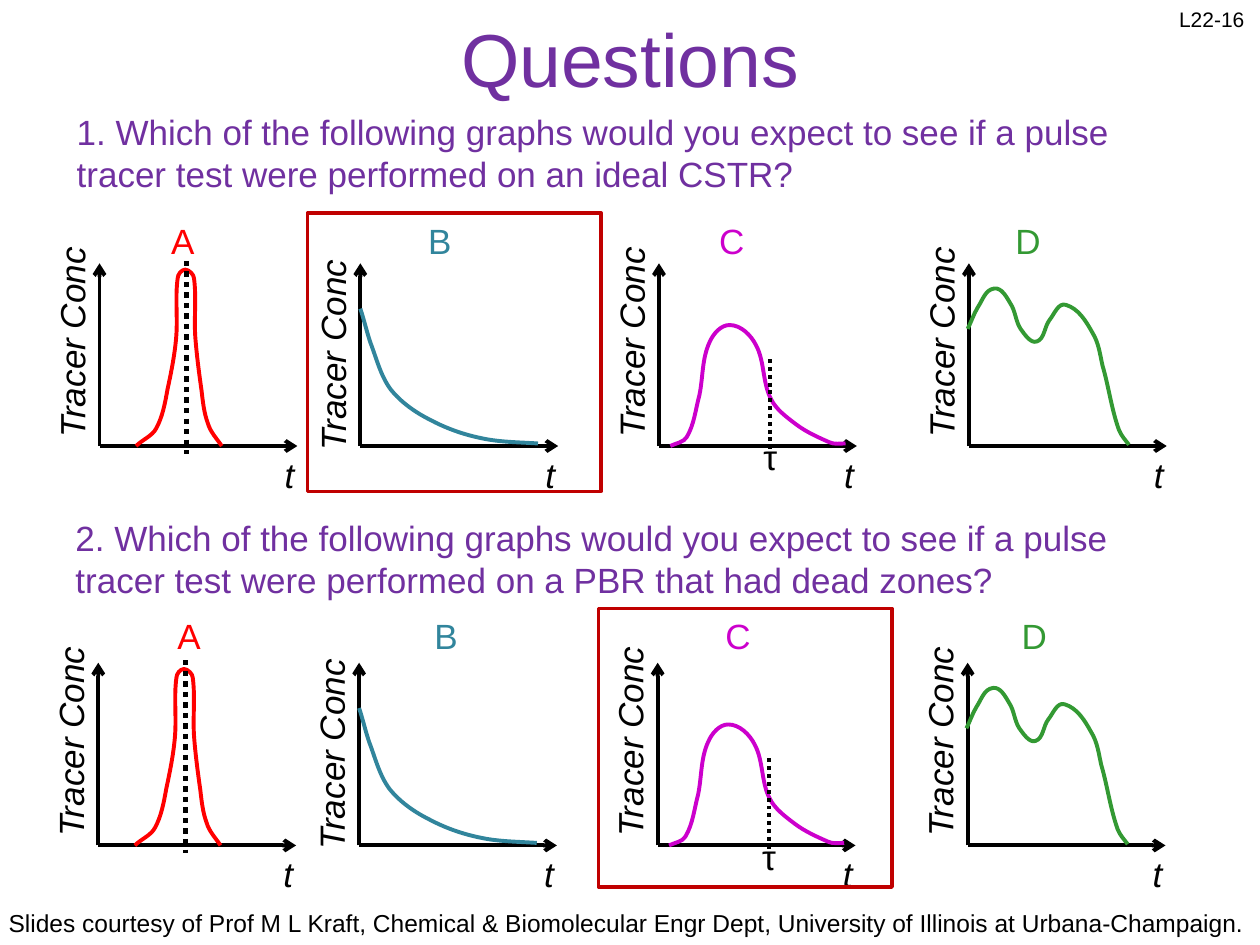
import dataclasses

import lxml.etree
import pptx
import pptx.dml.color
import pptx.enum.dml
import pptx.enum.shapes
import pptx.enum.text
import pptx.oxml.ns
import pptx.util

RGBColor = pptx.dml.color.RGBColor
qn = pptx.oxml.ns.qn

BLACK = RGBColor.from_string("000000")
PURPLE = RGBColor.from_string("7030A0")
RED = RGBColor.from_string("FF0000")
TEAL = RGBColor.from_string("31859C")
MAGENTA = RGBColor.from_string("CC00CC")
GREEN = RGBColor.from_string("339933")
FRAME_RED = RGBColor.from_string("C00000")

# The slide is a grid of 1000 columns by 750 rows, each 0.01 inch
COLUMNS, ROWS = 1000, 750
CELL = pptx.util.Inches(0.01)
AXIS_WIDTH, AXIS_HEIGHT = 157, 145
BASE = 354      # row of the time axes under the first question
LABEL = 44      # height of a one-line label


@dataclasses.dataclass
class Graph:
    letter: str
    color: RGBColor
    letter_left: int
    left: int           # column of the vertical axis
    knots: list         # curve: column right of, rows above the origin
    label_rise: int = 105
    marker: tuple = ()  # dotted line: column, top, bottom, width in points
    tau: bool = False


GRAPHS = [
    Graph("A", RED, 126, 79,
          [(29, 0), (45, 14), (54, 45), (61, 88), (62, 133), (68, 140),
           (75, 133), (76, 87), (81, 44), (86, 18), (97, 0)],
          marker=(69, 147, -6, 3)),
    Graph("B", TEAL, 330, 286,
          [(0, 109), (8, 82), (24, 45), (55, 21), (97, 6), (141, 2)],
          label_rise=95),
    Graph("C", MAGENTA, 561, 523,
          [(9, 0), (22, 7), (32, 40), (40, 82), (56, 96), (77, 80),
           (89, 37), (109, 17), (135, 3), (148, 2)],
          marker=(88, 69, -4, 2.25), tau=True),
    Graph("D", GREEN, 796, 769,
          [(-1, 93), (7, 110), (20, 125), (33, 113), (41, 93), (54, 83),
           (64, 100), (77, 112), (98, 90), (106, 64), (119, 13), (127, 1)]),
]


def cells(*counts):
    return [round(count * CELL) for count in counts]


def add_text(page, text, area, size=20, color=BLACK, italic=False, wrap=False):
    box = page.shapes.add_textbox(*cells(*area))
    box.text_frame.text = text
    box.text_frame.word_wrap = wrap
    span = box.text_frame.paragraphs[0].runs[0]
    span.font.name = "Arial"
    span.font.size = pptx.util.Pt(size)
    span.font.color.rgb = color
    span.font.italic = italic
    return box


def style_line(line, color, width):
    line.color.rgb = color
    line.width = pptx.util.Pt(width)


def add_line(page, start, end, width=2.25, arrow=False, dotted=False):
    connector = page.shapes.add_connector(
        pptx.enum.shapes.MSO_CONNECTOR.STRAIGHT, *cells(*start, *end))
    style_line(connector.line, BLACK, width)
    if dotted:
        connector.line.dash_style = pptx.enum.dml.MSO_LINE.ROUND_DOT
    properties = connector._element.spPr
    if arrow:
        lxml.etree.SubElement(properties.find(qn("a:ln")), qn("a:tailEnd"), type="arrow")
    lxml.etree.SubElement(properties, qn("a:effectLst"))


def bezier_points(knots):
    """Give two handles and an end for each stretch of a smooth curve."""
    places = [complex(column, -rise) for column, rise in knots]
    around = zip(places[:1] + places, places[1:] + places[-1:])
    slopes = [(after - before) / abs(after - before) for before, after in around]
    points = []
    for index, (start, end) in enumerate(zip(places, places[1:])):
        reach = abs(end - start) / 3
        points += [start + reach * slopes[index], end - reach * slopes[index + 1], end]
    return [(point.real, point.imag) for point in points]


def add_curve(page, origin, knots, color):
    builder = page.shapes.build_freeform(knots[0][0], -knots[0][1], scale=CELL)
    builder.add_line_segments(bezier_points(knots), close=False)
    curve = builder.convert_to_shape(*cells(*origin))
    # Join every three straight segments into one Bezier segment
    segments = list(curve._element.iter(qn("a:lnTo")))
    for trio in zip(*[iter(segments)] * 3):
        bezier = lxml.etree.Element(qn("a:cubicBezTo"))
        trio[0].addprevious(bezier)
        for segment in trio:
            bezier.append(segment[0])
            segment.getparent().remove(segment)
    curve.shadow.inherit = False
    curve.fill.background()
    style_line(curve.line, color, 2.25)


def add_graph(page, graph, shift):
    left, base = graph.left + shift[0], BASE + shift[1]

    # Axes and their labels
    add_line(page, (left, base), (left + AXIS_WIDTH, base), arrow=True)
    add_line(page, (left, base), (left, base - AXIS_HEIGHT), arrow=True)
    add_text(page, "t", (left + 137, base + 1, 28, LABEL), italic=True)
    label = add_text(page, "Tracer Conc",
                     (left - 108, base - graph.label_rise, 172, LABEL), italic=True)
    label.rotation = 270

    # Curve and residence time marker
    add_curve(page, (left, base), graph.knots, graph.color)
    if graph.marker:
        column, top, bottom, width = graph.marker
        add_line(page, (left + column, base - top), (left + column, base - bottom),
                 width, dotted=True)
    if graph.tau:
        add_text(page, "τ", (left + 73, base - 13, 32, LABEL))


def add_question(page, text, corner, shift, letter_shift, letter_top, frame_left):
    add_text(page, text, (*corner, 908, 77), color=PURPLE, wrap=True)
    for graph in GRAPHS:
        add_graph(page, graph, shift)
        add_text(page, graph.letter,
                 (graph.letter_left + letter_shift, letter_top, 40, LABEL),
                 color=graph.color)

    # Frame around the right answer
    frame = page.shapes.add_shape(pptx.enum.shapes.MSO_SHAPE.RECTANGLE,
                                  *cells(frame_left, letter_top, 233, 221))
    frame.shadow.inherit = False
    frame.fill.background()
    style_line(frame.line, FRAME_RED, 2)


def main():
    deck = pptx.Presentation()
    deck.slide_width, deck.slide_height = cells(COLUMNS, ROWS)
    page = deck.slides.add_slide(deck.slide_layouts[6])

    # Credit, page number and title
    add_text(page, "Slides courtesy of Prof M L Kraft, Chemical & Biomolecular Engr Dept, "
             "University of Illinois at Urbana-Champaign.", (-3, 716, 1006, 34), size=14)
    add_text(page, "L22-16", (926, 0, 74, 30), size=12)
    title = add_text(page, "Questions", (0, 0, COLUMNS, 136), 42.9, PURPLE, wrap=True)
    title.text_frame.margin_top = 10 * CELL
    title.text_frame.paragraphs[0].alignment = pptx.enum.text.PP_ALIGN.CENTER

    # Questions with their four graphs
    stem = ("Which of the following graphs would you expect to see "
            "if a pulse tracer test were performed on")
    add_question(page, f"1. {stem} an ideal CSTR?", (51, 83), (0, 0), 0, 169, 244)
    add_question(page, f"2. {stem} a PBR that had dead zones?", (50, 405),
                 (-1, 317), 5, 483, 475)

    deck.save("out.pptx")


if __name__ == "__main__":
    main()
